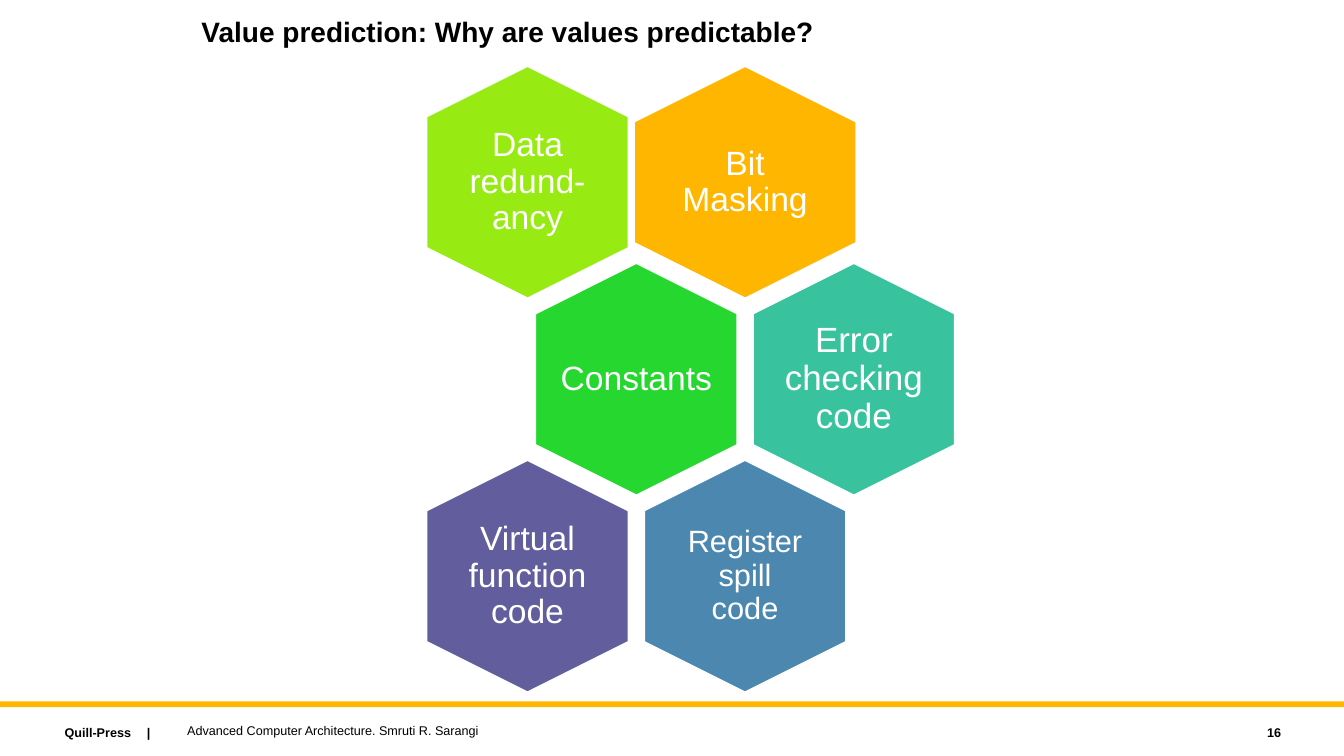
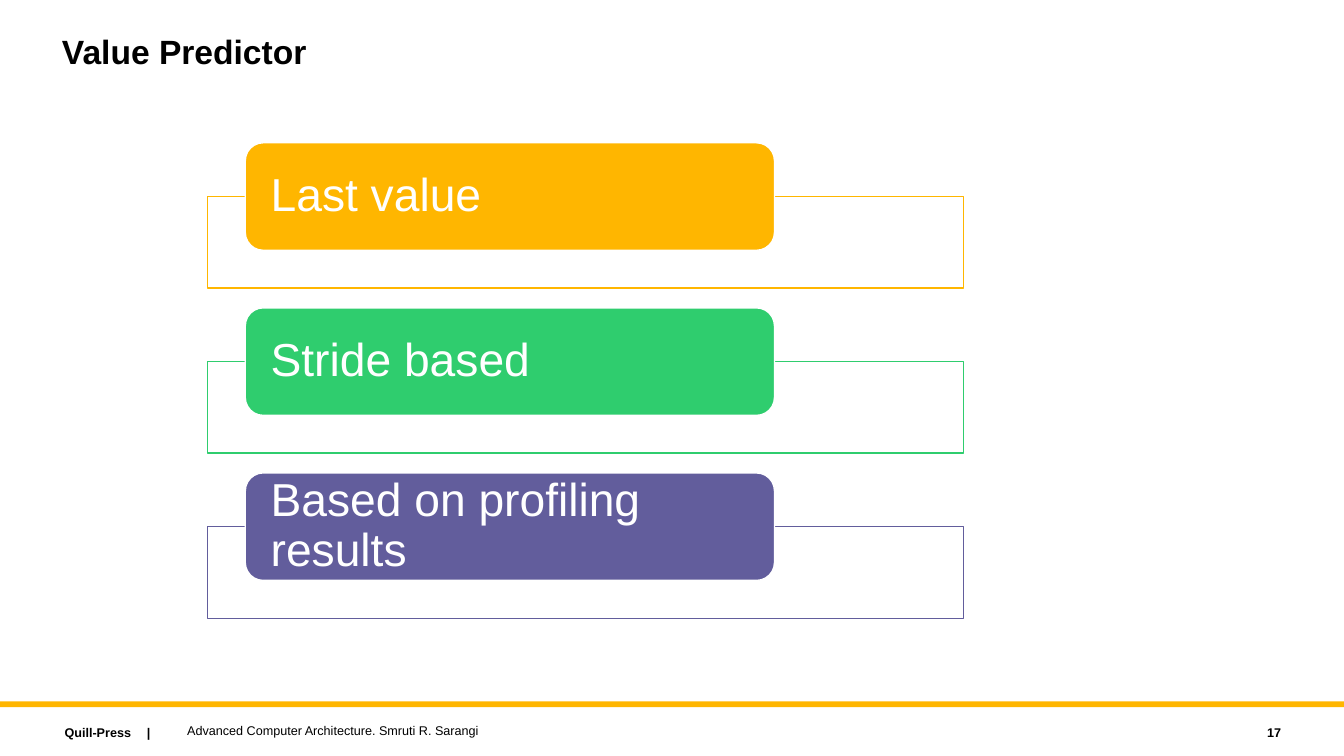
from lxml import etree
from pptx import Presentation
from pptx.dml.color import RGBColor
from pptx.enum.shapes import MSO_SHAPE
from pptx.enum.text import MSO_ANCHOR, PP_ALIGN
from pptx.oxml.ns import qn
from pptx.util import Emu, Pt

HEX = MSO_SHAPE.HEXAGON
RECT = MSO_SHAPE.RECTANGLE
ROUND = MSO_SHAPE.ROUNDED_RECTANGLE
TOP, MIDDLE = MSO_ANCHOR.TOP, MSO_ANCHOR.MIDDLE
LEFT, CENTER, RIGHT = PP_ALIGN.LEFT, PP_ALIGN.CENTER, PP_ALIGN.RIGHT

BLACK = RGBColor(0x00, 0x00, 0x00)
WHITE = RGBColor(0xFF, 0xFF, 0xFF)
AMBER = RGBColor(0xFF, 0xB6, 0x00)
LIME = RGBColor(0x97, 0xEB, 0x13)
GREEN = RGBColor(0x26, 0xD7, 0x30)
TEAL = RGBColor(0x38, 0xC3, 0x9E)
BLUE = RGBColor(0x4B, 0x87, 0xAF)
VIOLET = RGBColor(0x62, 0x5D, 0x9C)
MINT = RGBColor(0x2F, 0xCD, 0x6E)

# The slide is a grid of square cells.
COLS, ROWS, CELL = 160, 90, 76200


def cells(count):
    return Emu(round(count * CELL))


class Deck:
    """Holds the style and the current slide; lengths are in grid cells."""

    face = "Arial"

    def __init__(self):
        self.file = Presentation()
        self.file.slide_width = cells(COLS)
        self.file.slide_height = cells(ROWS)
        self.slide = None

    def page(self, number):
        """Start a slide with its band and footer."""
        self.slide = self.file.slides.add_slide(self.file.slide_layouts[6])
        self.shape(RECT, (0, 83.5, COLS, 0.7), AMBER)
        self.text("Quill-Press\t|", (6.5, 85.7, 27.2, 3), 9, bold=True, tab=9.8)
        self.text("Advanced Computer Architecture. Smruti R. Sarangi",
                  (21.1, 85.4, 96, 3), 9, anchor=MIDDLE)
        self.text(str(number), (136.9, 85.7, 16.8, 3), 9, bold=True,
                  align=RIGHT, anchor=MIDDLE)

    def title(self, words, box, size):
        self.text(words, box, size, bold=True, space=0.9)

    def shape(self, kind, box, fill, line=None, alpha=None):
        item = self.slide.shapes.add_shape(kind, *map(cells, box))
        item.shadow.inherit = False
        item.fill.solid()
        item.fill.fore_color.rgb = fill
        if alpha:
            tint = item._element.spPr.find(".//" + qn("a:srgbClr"))
            etree.SubElement(tint, qn("a:alpha"), val=str(alpha * 1000))
        if line is None:
            item.line.fill.background()
        else:
            item.line.color.rgb = line
            item.line.width = Pt(1)
        return item

    def text(self, words, box, size, **style):
        item = self.slide.shapes.add_textbox(*map(cells, box))
        self.label(item.text_frame, words, size, **style)

    def label(self, frame, words, size, color=BLACK, bold=False, align=LEFT,
              anchor=TOP, space=None, inset=None, tab=None):
        """Fill a frame with one paragraph; inset is (side, top)."""
        frame.word_wrap = True
        frame.vertical_anchor = anchor
        if inset:
            side, top = map(cells, inset)
            frame.margin_left = frame.margin_right = side
            frame.margin_top = frame.margin_bottom = top
        para = frame.paragraphs[0]
        para.text = words
        para.alignment = align
        if space:
            para.line_spacing = space
        if tab:
            stops = etree.SubElement(para._p.get_or_add_pPr(), qn("a:tabLst"))
            etree.SubElement(stops, qn("a:tab"), pos=str(cells(tab)), algn="l")
        font = para.font
        font.name, font.size, font.bold = self.face, Pt(size), bold
        font.color.rgb = color

    def hexa(self, words, mid, fill, size=24, wide=16.6, tall=24):
        """Upright hexagon around a middle point, with a label on top."""
        x, y = mid
        long, high = 27.6, 19
        item = self.shape(HEX, (x - long / 2, y - tall / 2, long, tall),
                          fill, WHITE)
        item.rotation = 90
        self.text(words, (x - wide / 2, y - high / 2, wide, high), size,
                  color=WHITE, align=CENTER, anchor=MIDDLE, space=0.9,
                  inset=(0, 0))

    def bar(self, words, top, color):
        """Outlined frame with a rounded heading over its upper edge."""
        self.shape(RECT, (24.7, top + 6.4, 90, 10.9), WHITE, color, alpha=90)
        pill = self.shape(ROUND, (29.2, top, 63, 12.8), color, WHITE)
        self.label(pill.text_frame, words, 33, color=WHITE, anchor=MIDDLE,
                   space=0.9, inset=(2.4, 0))


def reasons(deck):
    deck.page(16)
    deck.title("Value prediction: Why are values predictable?",
               (22.8, 1.6, 78.6, 5.3), 20)
    combs = [
        (0, 1, "Bit Masking", AMBER, {"tall": 26.4}),
        (0, 0, "Data redund-ancy", LIME, {}),
        (1, 0, "Constants", GREEN, {"wide": 22}),
        (1, 1, "Error checking code", TEAL, {"size": 25}),
        (2, 1, "Register spill code", BLUE, {"size": 22, "wide": 14.4}),
        (2, 0, "Virtual function code", VIOLET, {}),
    ]
    step, drop = 25.9, 23.45
    for row, col, words, fill, style in combs:
        mid = 62.8 + (col + row % 2 / 2) * step, 21.7 + row * drop
        deck.hexa(words, mid, fill, **style)


def kinds(deck):
    deck.page(17)
    deck.title("Value Predictor", (6.2, 3.6, 120, 10.8), 24)
    bars = [("Last value", AMBER), ("Stride based", MINT),
            ("Based on profiling results", VIOLET)]
    for row, (words, color) in enumerate(bars):
        deck.bar(words, 17 + row * 19.65, color)


def main():
    deck = Deck()
    reasons(deck)
    kinds(deck)
    deck.file.save("out.pptx")


if __name__ == "__main__":
    main()
